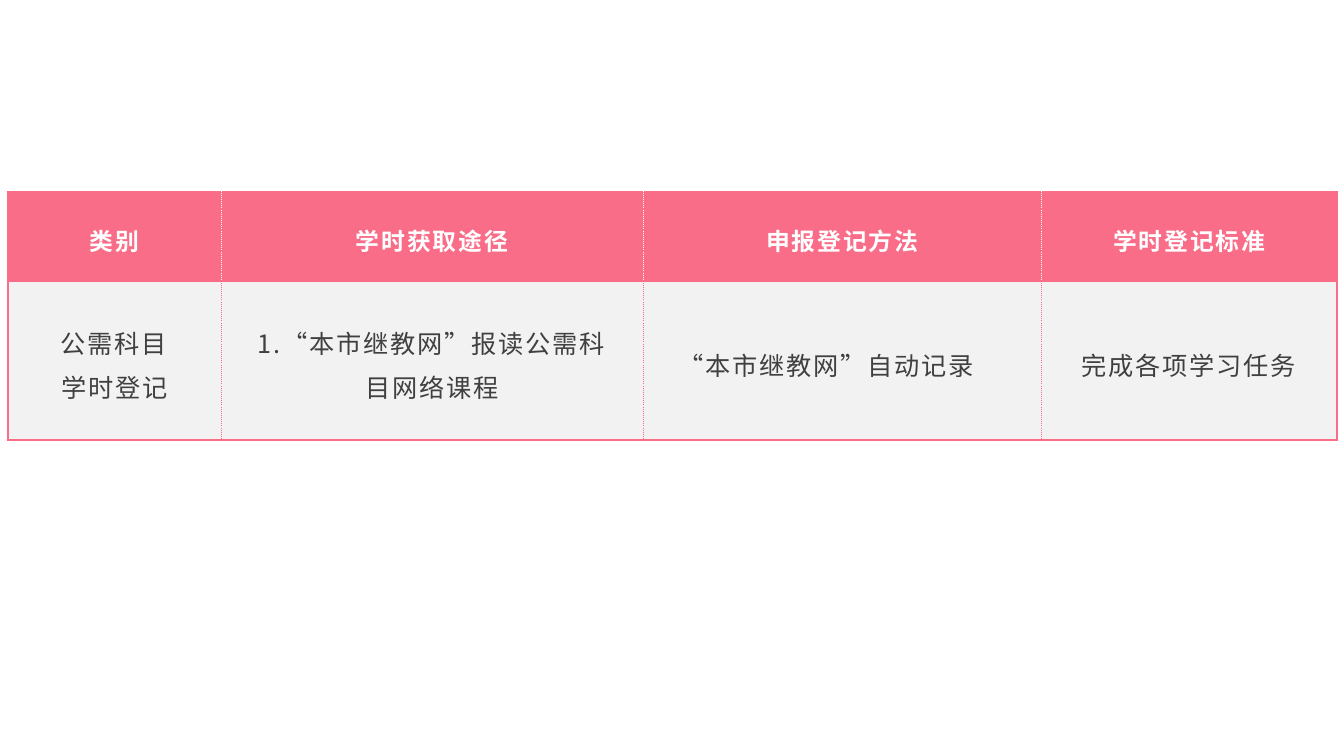
import pptx
import pptx.dml.color
import pptx.enum.lang
import pptx.enum.text
import pptx.oxml
import pptx.oxml.ns
import pptx.util
from lxml import etree

Inches = pptx.util.Inches
Pt = pptx.util.Pt
RGBColor = pptx.dml.color.RGBColor
Align = pptx.enum.text.PP_ALIGN

PINK = RGBColor(0xF9, 0x6D, 0x88)
WHITE = RGBColor(0xFF, 0xFF, 0xFF)
PALE_GRAY = RGBColor(0xF2, 0xF2, 0xF2)
DARK_GRAY = RGBColor(0x40, 0x40, 0x40)

COLUMN_WIDTHS = [2.11, 4.19, 3.95, 2.93]
ROW_HEIGHTS = [0.89, 1.57]
HEADERS = ["类别", "学时获取途径", "申报登记方法", "学时登记标准"]
REGISTRATION = ["公需科目 学时登记", "1.“本市继教网”报读公需科目网络课程",
                "“本市继教网”自动记录", "完成各项学习任务"]


class SlideBuilder:
    font_name = "Noto Sans CJK SC"
    letter_spacing = 1.3

    def __init__(self, presentation):
        self.slide = presentation.slides.add_slide(presentation.slide_layouts[6])

    def table(self, left, top, column_widths, row_heights):
        frame = self.slide.shapes.add_table(
            len(row_heights), len(column_widths), Inches(left), Inches(top),
            Inches(sum(column_widths)), Inches(sum(row_heights)))
        table = frame.table
        table.horz_banding = False
        for column, width in zip(table.columns, column_widths):
            column.width = Inches(width)
        for row, height in zip(table.rows, row_heights):
            row.height = Inches(height)
        return table

    def border(self, cell, side, color, width, dash):
        properties = cell._tc.get_or_add_tcPr()
        line = etree.SubElement(properties, pptx.oxml.ns.qn(f"a:ln{side}"), w=str(Pt(width)))
        fill = etree.SubElement(line, pptx.oxml.ns.qn("a:solidFill"))
        etree.SubElement(fill, pptx.oxml.ns.qn("a:srgbClr"), val=str(color))
        etree.SubElement(line, pptx.oxml.ns.qn("a:prstDash"), val=dash)

    def cell(self, cell, text, size, color, fill, bold=False, align=Align.CENTER):
        cell.fill.solid()
        cell.fill.fore_color.rgb = fill
        cell.vertical_anchor = pptx.enum.text.MSO_ANCHOR.MIDDLE
        cell.margin_left = cell.margin_right = Inches(0.35)
        cell.margin_top = cell.margin_bottom = Inches(0.24)
        cell.text_frame.text = text
        paragraph = cell.text_frame.paragraphs[0]
        paragraph.alignment = align
        paragraph.line_spacing = 1.2
        for run in paragraph.runs:
            font = run.font
            font.size = Pt(size)
            font.bold = bold
            font.color.rgb = color
            font.name = self.font_name
            font.language_id = pptx.enum.lang.MSO_LANGUAGE_ID.SIMPLIFIED_CHINESE
            properties = run._r.get_or_add_rPr()
            properties.set("spc", str(round(self.letter_spacing * 100)))
            etree.SubElement(properties, pptx.oxml.ns.qn("a:ea"), typeface=self.font_name)

    def row(self, table, row_index, texts, divider, alignments, **style):
        last = len(texts) - 1
        for index, (text, align) in enumerate(zip(texts, alignments)):
            cell = table.cell(row_index, index)
            # Solid outer frame, dotted column dividers
            for side, is_outer in (("L", index == 0), ("R", index == last),
                                   ("T", True), ("B", True)):
                if is_outer:
                    self.border(cell, side, PINK, 1.5, "solid")
                else:
                    self.border(cell, side, divider, 0.25, "sysDot")
            self.cell(cell, text, align=align, **style)


def main():
    presentation = pptx.Presentation()
    presentation.slide_width = Inches(13.33)
    presentation.slide_height = Inches(7.5)
    builder = SlideBuilder(presentation)

    # Table of registration rules
    table = builder.table(0.08, 1.9, COLUMN_WIDTHS, ROW_HEIGHTS)

    # Header row
    builder.row(table, 0, HEADERS, WHITE, [Align.CENTER] * 4,
                size=17, color=WHITE, fill=PINK, bold=True)

    # Registration row
    builder.row(table, 1, REGISTRATION, PINK,
                [Align.CENTER, Align.CENTER, Align.LEFT, Align.CENTER],
                size=18, color=DARK_GRAY, fill=PALE_GRAY)

    presentation.save("out.pptx")


if __name__ == "__main__":
    main()
